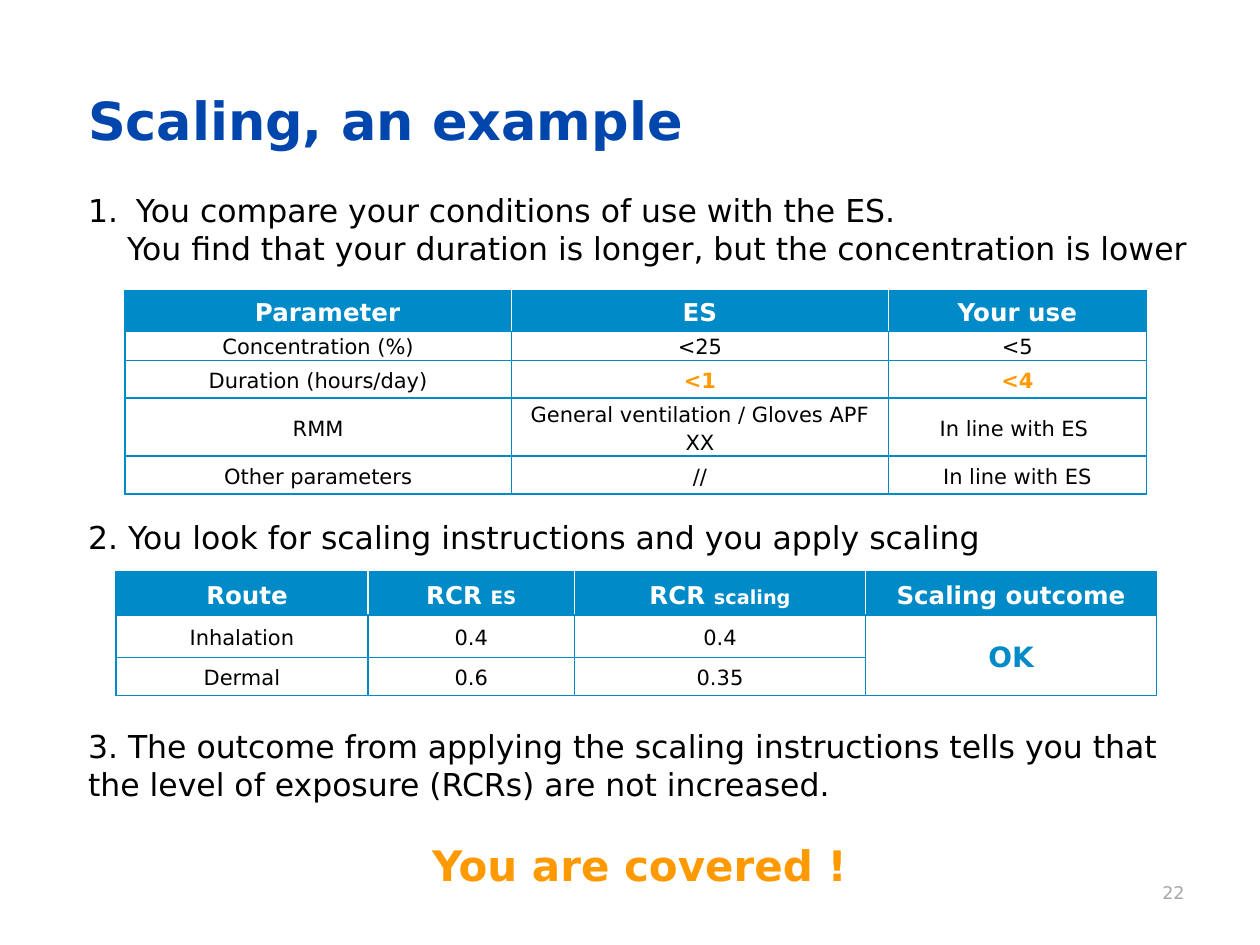
from lxml import etree
from pptx import Presentation
from pptx import util as u
from pptx.dml.color import RGBColor
from pptx.enum import text
from pptx.oxml import ns

FONT = "DejaVu Sans"
COLORS = {
    "title": "0046AD",
    "table": "008BC8",
    "accent": "FF9900",
    "black": "000000",
    "white": "FFFFFF",
    "grey": "A6A6A6",
}
ALIGN = text.PP_ALIGN


def add_run(p, words, size, color="black", bold=False):
    r = p.add_run()
    r.text = words
    r.font.name = FONT
    r.font.size = u.Pt(size)
    r.font.bold = bold
    r.font.color.rgb = RGBColor.from_string(COLORS[color])


def add_textbox(s, left, top, width, height, wrap=True):
    sp = s.shapes.add_textbox(*map(u.Inches, (left, top, width, height)))
    sp.text_frame.word_wrap = wrap
    return sp.text_frame


def set_indent(p, margin, first=0):
    pPr = p._p.get_or_add_pPr()
    pPr.set("marL", str(u.Inches(margin)))
    pPr.set("indent", str(u.Inches(first)))
    return pPr


def set_borders(cell, **sides):
    """Draw the four 1 pt cell edges; sides named L, R, T or B override the blue."""
    tcPr = cell._tc.get_or_add_tcPr()
    for side in "LRTB":
        ln = etree.SubElement(tcPr, ns.qn("a:ln" + side), w=str(u.Pt(1)))
        fill = etree.SubElement(ln, ns.qn("a:solidFill"))
        etree.SubElement(fill, ns.qn("a:srgbClr"), val=COLORS[sides.get(side, "table")])


def fill_cell(cell, runs, header=False):
    cell.vertical_anchor = text.MSO_ANCHOR.MIDDLE
    cell.margin_left = cell.margin_right = u.Inches(0.05)
    cell.margin_top = cell.margin_bottom = 0
    if header:
        cell.fill.solid()
        cell.fill.fore_color.rgb = RGBColor.from_string(COLORS["table"])
    else:
        cell.fill.background()
    p = cell.text_frame.paragraphs[0]
    p.alignment = ALIGN.CENTER
    p.line_spacing = 1.15
    for run in runs:
        add_run(p, *run)


def head(words, small=None, small_size=11):
    runs = [(words, 14, "white", True)]
    if small:
        runs.append((small, small_size, "white", True))
    return runs


def body(words):
    return [(words, 12)]


def strong(words, size=12, color="accent"):
    return [(words, size, color, True)]


def add_grid(s, left, top, widths, heights, rows):
    """Add a table whose first row is the header; a None cell joins the one above."""
    box = map(u.Inches, (left, top, sum(widths), sum(heights)))
    tbl = s.shapes.add_table(len(heights), len(widths), *box).table
    tbl.first_row = tbl.horz_banding = False
    for col, width in zip(tbl.columns, widths):
        col.width = u.Inches(width)
    for row, height in zip(tbl.rows, heights):
        row.height = u.Inches(height)
    last = len(widths) - 1
    for i, row in enumerate(rows):
        for j, runs in enumerate(row):
            cell = tbl.cell(i, j)
            sides = {}
            if i == 0:
                sides["L"] = "table" if j == 0 else "white"
                sides["R"] = "table" if j == last else "white"
            set_borders(cell, **sides)
            if runs is None:
                tbl.cell(i - 1, j).merge(cell)
            else:
                fill_cell(cell, runs, header=i == 0)
    set_indent(tbl.cell(0, 0).text_frame.paragraphs[0], 0.15)


def add_steps(s):
    # Step 1: numbered line and its continuation
    tf = add_textbox(s, 0.6, 1.47, 9.05, 1.01, wrap=False)
    p = tf.paragraphs[0]
    pPr = set_indent(p, 0.38, -0.38)
    etree.SubElement(pPr, ns.qn("a:buFont"), typeface="+mj-lt")
    etree.SubElement(pPr, ns.qn("a:buAutoNum"), type="arabicPeriod")
    add_run(p, "You compare your conditions of use with the ES.", 18)
    p = tf.add_paragraph()
    set_indent(p, 0.31)
    add_run(p, "You find that your duration is longer, but the concentration is lower", 18)

    # Step 2
    tf = add_textbox(s, 0.6, 4.06, 7.41, 0.71, wrap=False)
    add_run(tf.paragraphs[0], "2. You look for scaling instructions and you apply scaling", 18)

    # Step 3 and conclusion
    tf = add_textbox(s, 0.6, 5.72, 8.95, 1.41)
    add_run(tf.paragraphs[0], "3. The outcome from applying the scaling instructions tells you that "
            "the level of exposure (RCRs) are not increased.", 18)
    p = tf.add_paragraph()
    p.alignment = ALIGN.CENTER
    p.space_before = u.Pt(21)
    add_run(p, "You are covered !", 24, "accent", True)


def main():
    prs = Presentation()
    prs.slide_width, prs.slide_height = u.Inches(10), u.Inches(7.5)
    s = prs.slides.add_slide(prs.slide_layouts[6])

    # Title
    tf = add_textbox(s, 0.6, 0.68, 8.81, 0.54)
    tf.vertical_anchor = text.MSO_ANCHOR.MIDDLE
    add_run(tf.paragraphs[0], "Scaling, an example", 30, "title", True)

    add_steps(s)

    # Conditions of use
    add_grid(s, 0.99, 2.31, [3.07, 2.99, 2.05], [0.32, 0.17, 0.3, 0.3, 0.3], [
        [head("Parameter"), head("ES"), head("Your use")],
        [body("Concentration (%)"), body("<25"), body("<5")],
        [body("Duration (hours/day)"), strong("<1"), strong("<4")],
        [body("RMM"), body("General ventilation / Gloves APF XX"), body("In line with ES ")],
        [body("Other parameters"), body("//"), body("In line with ES")],
    ])

    # Scaling results
    add_grid(s, 0.92, 4.54, [2, 1.64, 2.31, 2.31], [0.34, 0.34, 0.3], [
        [head("Route "), head("RCR ", "ES", 10.5), head("RCR ", "scaling"), head("Scaling outcome")],
        [body("Inhalation"), body("0.4"), body("0.4"), strong("OK", 16, "table")],
        [body("Dermal"), body("0.6"), body("0.35"), None],
    ])

    # Page number
    p = add_textbox(s, 7.17, 6.95, 2.33, 0.4).paragraphs[0]
    p.alignment = ALIGN.RIGHT
    add_run(p, "22", 10, "grey")

    prs.save("out.pptx")


if __name__ == "__main__":
    main()
